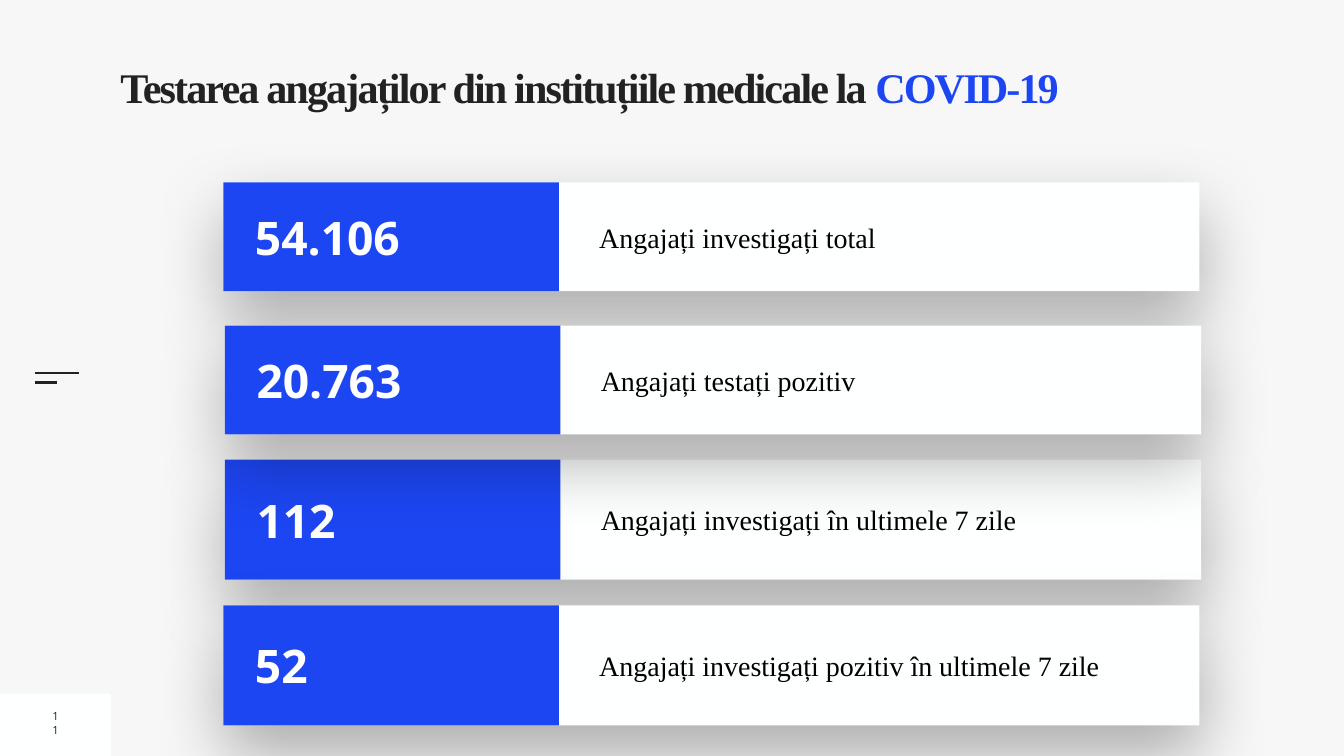
from lxml import etree
from pptx import Presentation
from pptx.dml.color import RGBColor as RGB
from pptx.enum.shapes import MSO_CONNECTOR as LINE, MSO_SHAPE as SHAPE
from pptx.enum.text import MSO_ANCHOR as ANCHOR, MSO_AUTO_SIZE as FIT, PP_ALIGN as ALIGN
from pptx.oxml import parse_xml
from pptx.oxml.ns import qn
from pptx.util import Pt

COLORS = {"back": "F7F7F7", "white": "FEFFFF", "blue": "1D46F3",
          "dark": "222222", "black": "000000", "light": "FFFFFF"}
INK = {name: RGB.from_string(code) for name, code in COLORS.items()}
FONTS = {
    "title": dict(name="Times New Roman", size=Pt(60.3), bold=True),
    "label": dict(name="Times New Roman", size=Pt(40), bold=False),
    "count": dict(name="Open Sans", size=Pt(66), bold=True),
    "page": dict(name="Open Sans", size=Pt(16), bold=False),
}
SHADOW = f"""<a:outerShdw xmlns:a="http://schemas.openxmlformats.org/drawingml/2006/main"
  blurRad="{Pt(100)}" dist="{Pt(40)}" dir="5400000" algn="ctr" rotWithShape="0">
  <a:srgbClr val="{COLORS['black']}"><a:alpha val="30000"/></a:srgbClr></a:outerShdw>"""


def add_rect(shapes, x, y, w, h, ink):
    rect = shapes.add_shape(SHAPE.RECTANGLE, Pt(x), Pt(y), Pt(w), Pt(h))
    rect.shadow.inherit = False
    rect.fill.solid()
    rect.fill.fore_color.rgb = INK[ink]
    rect.line.fill.background()
    return rect


def add_text(shapes, x, y, w, h, text, font, ink):
    """Add a wrapped, vertically centred text box and return its paragraph."""
    frame = shapes.add_textbox(Pt(x), Pt(y), Pt(w), Pt(h)).text_frame
    style = dict(word_wrap=True, vertical_anchor=ANCHOR.MIDDLE,
                 margin_left=Pt(7.2), margin_right=Pt(7.2),
                 margin_top=Pt(7.2), margin_bottom=Pt(7.2))
    for key, value in style.items():
        setattr(frame, key, value)
    para = frame.paragraphs[0]
    run = para.add_run()
    run.text = text
    for key, value in FONTS[font].items():
        setattr(run.font, key, value)
    run.font.color.rgb = INK[ink]
    return para


deck = Presentation()
deck.slide_width, deck.slide_height = Pt(1920), Pt(1080)
slide = deck.slides.add_slide(deck.slide_layouts[5])
slide.background.fill.solid()
slide.background.fill.fore_color.rgb = INK["back"]

# Page corner and the two margin strokes
add_rect(slide.shapes, 0, 991, 158.5, 89, "white")
for y, end in ((533.5, 113), (546.5, 81.5)):
    stroke = slide.shapes.add_connector(LINE.STRAIGHT, Pt(49.7), Pt(y), Pt(end), Pt(y))
    stroke.line.width = Pt(3)
    stroke.line.color.rgb = INK["dark"]
    etree.SubElement(stroke.element.spPr, qn("a:effectLst"))
page = add_text(slide.shapes, 67, 1014.5, 24.5, 36.7, "11", "page", "dark")
page.alignment = ALIGN.CENTER

# Title
title = slide.shapes.title
place = dict(left=Pt(172), top=Pt(102.2), width=Pt(1656), height=Pt(113.8))
for key, value in place.items():
    setattr(title, key, value)
frame = title.text_frame
style = dict(auto_size=FIT.NONE, word_wrap=True, vertical_anchor=ANCHOR.TOP,
             margin_left=0, margin_right=0, margin_top=0, margin_bottom=0)
for key, value in style.items():
    setattr(frame, key, value)
para = frame.paragraphs[0]
para.alignment = ALIGN.LEFT
para.line_spacing = 0.8
for text, ink in (("Testarea angajaților din instituțiile medicale la ", "dark"),
                  ("COVID-19", "blue")):
    run = para.add_run()
    run.text = text
    for key, value in FONTS["title"].items():
        setattr(run.font, key, value)
    run.font.color.rgb = INK[ink]
    run.font._element.set("spc", "-270")

# Rows from back to front, so that each shadow falls on the right neighbour
ROWS = [
    (319, 260.6, 155.5, "54.106", "Angajați investigați total"),
    (321.2, 656.6, 171.4, "112", "Angajați investigați în ultimele 7 zile"),
    (319, 864.7, 171.4, "52", "Angajați investigați pozitiv în ultimele 7 zile"),
    (321.2, 465.1, 155.5, "20.763", "Angajați testați pozitiv"),
]
for x, y, h, count, label in ROWS:
    row = slide.shapes.add_group_shape().shapes
    card = add_rect(row, x, y, 1394.6, h, "white")
    card.element.spPr.find(qn("a:effectLst")).append(parse_xml(SHADOW))
    mid, tall = y + h / 2, h * 0.35
    add_text(row, x + 530, mid - tall / 2, 846.7, tall, label, "label", "black")
    add_rect(row, x, y, 479.5, h, "blue")
    add_text(row, x + 38.2, mid - 47.2, 434.2, 94.4, count, "count", "light")

deck.save("out.pptx")
